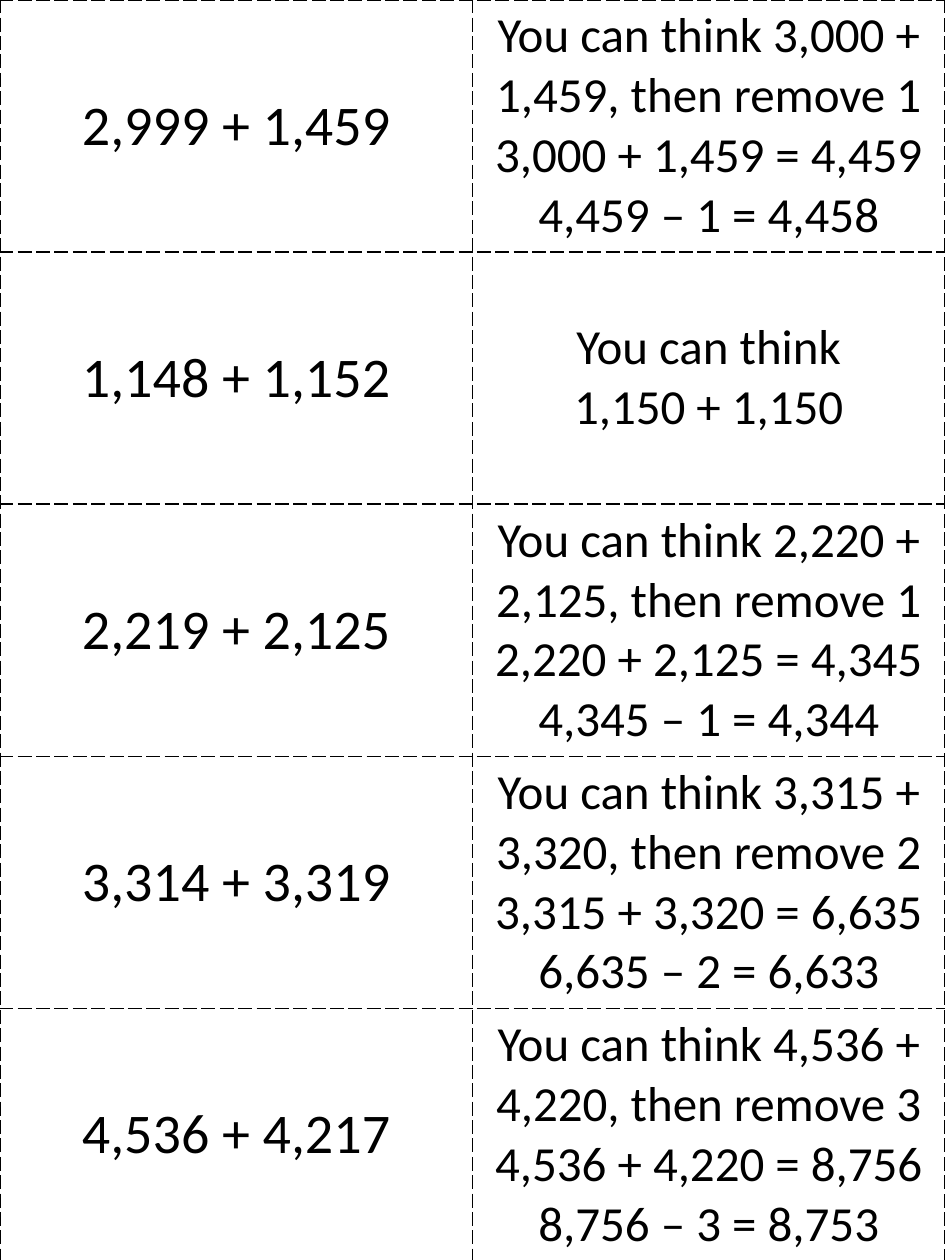
"""Build a sheet of addition cards, each sum beside a way to think about it."""
from lxml.etree import SubElement
from pptx import Presentation
from pptx.dml.color import RGBColor
from pptx.enum.text import MSO_ANCHOR, PP_ALIGN
from pptx.oxml.ns import qn
from pptx.util import Inches, Pt

BLACK = RGBColor(0x00, 0x00, 0x00)
WHITE = RGBColor(0xFF, 0xFF, 0xFF)
WIDTH, HEIGHT = 7.5, 10
CARDS = [
    ("2,999 + 1,459", ["You can think 3,000 + 1,459, then remove 1",
                       "3,000 + 1,459 = 4,459", "4,459 – 1 = 4,458"]),
    ("1,148 + 1,152", ["You can think", "1,150 + 1,150"]),
    ("2,219 + 2,125", ["You can think 2,220 + 2,125, then remove 1",
                       "2,220 + 2,125 = 4,345", "4,345 – 1 = 4,344"]),
    ("3,314 + 3,319", ["You can think 3,315 + 3,320, then remove 2",
                       "3,315 + 3,320 = 6,635", "6,635 – 2 = 6,633"]),
    ("4,536 + 4,217", ["You can think 4,536 + 4,220, then remove 3",
                       "4,536 + 4,220 = 8,756", "8,756 – 3 = 8,753"]),
]


class Sheet:
    """Hold the card style and the current slide."""

    font, ink, paper = "Calibri", BLACK, WHITE
    sum_size, hint_size, rule = Pt(32), Pt(28), Pt(1)

    def __init__(self, slide):
        """Start on the given slide."""
        self.slide = slide

    def border(self, cell):
        """Draw long dashes on all four sides of a cell."""
        props = cell._tc.get_or_add_tcPr()
        for side in ("a:lnL", "a:lnR", "a:lnT", "a:lnB"):
            line = SubElement(props, qn(side), w=str(int(self.rule)))
            fill = SubElement(line, qn("a:solidFill"))
            SubElement(fill, qn("a:srgbClr"), val=str(self.ink))
            SubElement(line, qn("a:prstDash"), val="lgDash")

    def text(self, cell, lines, size):
        """Write centred lines, one paragraph each."""
        cell.vertical_anchor = MSO_ANCHOR.MIDDLE
        frame = cell.text_frame
        for i, line in enumerate(lines):
            para = frame.add_paragraph() if i else frame.paragraphs[0]
            para.alignment = PP_ALIGN.CENTER
            run = para.add_run()
            run.text = line
            run.font.name = self.font
            run.font.size = size
            run.font.bold = False
            run.font.color.rgb = self.ink

    def cell(self, cell, lines, size):
        """Style and fill one cell."""
        self.border(cell)
        cell.fill.solid()
        cell.fill.fore_color.rgb = self.paper
        self.text(cell, lines, size)

    def table(self, cards):
        """Lay the cards over the whole page."""
        table = self.slide.shapes.add_table(
            len(cards), 2, Inches(0), Inches(0), Inches(WIDTH), Inches(HEIGHT)).table
        table.first_row = table.horz_banding = False
        for row, (total, hint) in enumerate(cards):
            self.cell(table.cell(row, 0), [total], self.sum_size)
            self.cell(table.cell(row, 1), hint, self.hint_size)


def main():
    """Make and save the sheet."""
    deck = Presentation()
    deck.slide_width, deck.slide_height = Inches(WIDTH), Inches(HEIGHT)
    sheet = Sheet(deck.slides.add_slide(deck.slide_layouts[6]))
    sheet.table(CARDS)
    deck.save("out.pptx")


if __name__ == "__main__":
    main()
